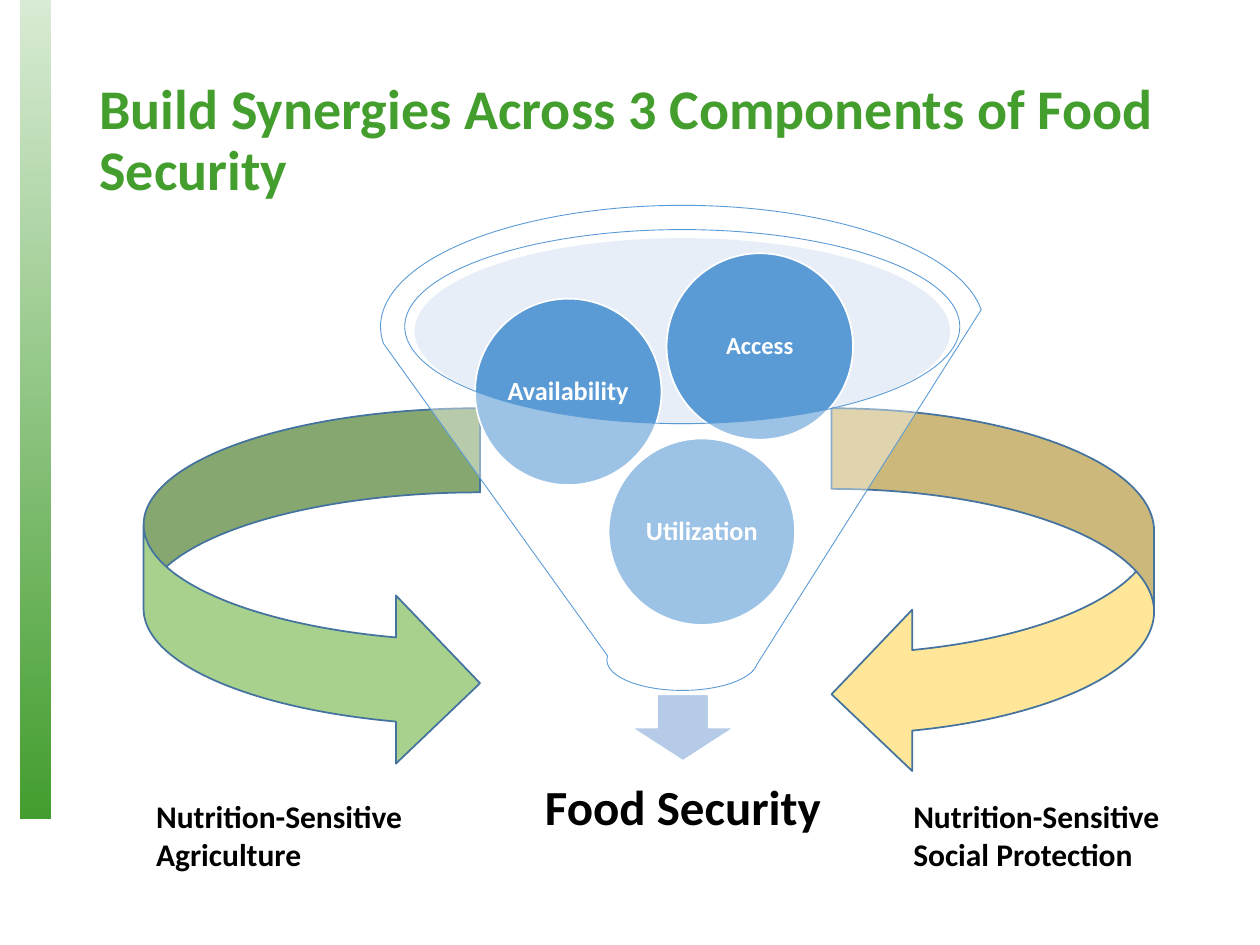
from lxml.etree import SubElement
from pptx import Presentation
from pptx.dml.color import RGBColor
from pptx.enum.shapes import MSO_SHAPE
from pptx.enum.text import MSO_ANCHOR, PP_ALIGN
from pptx.oxml.ns import qn
from pptx.util import Inches, Pt

COLORS = {
    "green": "439E2E", "leaf": "A9D18E", "sand": "FFE699", "edge": "43739E",
    "blue": "5B9BD5", "pale": "C4D5EB", "mist": "B5CBE7",
    "white": "FFFFFF", "black": "000000",
}


class Board:
    font = "Calibri"

    def __init__(self, deck):
        self.slide = deck.slides.add_slide(deck.slide_layouts[5])

    def color(self, name):
        return RGBColor.from_string(COLORS[name])

    def fade(self, fill, percent):
        color = next(fill.iter(qn("a:srgbClr")))
        SubElement(color, qn("a:alpha")).set("val", str(percent * 1000))

    def letter(self, shape, text, size, color, align=PP_ALIGN.LEFT,
               anchor=MSO_ANCHOR.TOP, inset=None, spacing=None):
        frame = shape.text_frame
        frame.text = text
        frame.word_wrap = True
        frame.vertical_anchor = anchor
        if inset is not None:
            frame.margin_left = frame.margin_right = Inches(inset)
            frame.margin_top = frame.margin_bottom = Inches(inset)
        for line in frame.paragraphs:
            line.alignment = align
            line.line_spacing = spacing
            for run in line.runs:
                run.font.name = self.font
                run.font.size = Pt(size)
                run.font.bold = True
                run.font.color.rgb = self.color(color)

    def title(self, text, box):
        shape = self.slide.shapes.title
        shape.left, shape.top, shape.width, shape.height = map(Inches, box)
        self.letter(shape, text, 32, "green", anchor=MSO_ANCHOR.MIDDLE, spacing=0.9)

    def shape(self, kind, box, fill, line=None, weight=1, alpha=None):
        shape = self.slide.shapes.add_shape(kind, *map(Inches, box))
        shape.shadow.inherit = False
        shape.fill.solid()
        shape.fill.fore_color.rgb = self.color(fill)
        if alpha:
            self.fade(shape._element.spPr.find(qn("a:solidFill")), alpha)
        if line:
            shape.line.color.rgb = self.color(line)
            shape.line.width = Pt(weight)
        else:
            shape.line.fill.background()
        return shape

    def stripe(self, box):
        shape = self.shape(MSO_SHAPE.RECTANGLE, box, "green")
        shape.fill.gradient()
        shape.fill.gradient_angle = 270
        for stop in shape.fill.gradient_stops:
            stop.color.rgb = self.color("green")
        self.fade(shape._element.spPr.find(qn("a:gradFill")), 20)

    def ball(self, text, left, top, size):
        shape = self.shape(MSO_SHAPE.OVAL, (left, top, 1.48, 1.48), "blue", "white")
        self.letter(shape, text, size, "white", PP_ALIGN.CENTER,
                    MSO_ANCHOR.MIDDLE, 0.02, 0.9)

    def label(self, text, box, size=18, **style):
        shape = self.slide.shapes.add_textbox(*map(Inches, box))
        self.letter(shape, text, size, "black", **style)


def main():
    deck = Presentation()
    deck.slide_width, deck.slide_height = Inches(10), Inches(7.5)
    board = Board(deck)

    board.stripe((0.16, 0, 0.24, 6.5))
    board.title("Build Synergies Across 3 Components of Food Security",
                (0.69, 0.4, 8.62, 1.45))
    board.shape(MSO_SHAPE.CURVED_LEFT_ARROW, (6.6, 3.24, 2.56, 2.91), "sand", "edge")
    board.shape(MSO_SHAPE.CURVED_RIGHT_ARROW, (1.14, 3.24, 2.67, 2.85), "leaf", "edge")

    board.shape(MSO_SHAPE.OVAL, (3.29, 1.89, 4.25, 1.48), "pale", alpha=40)
    board.shape(MSO_SHAPE.DOWN_ARROW, (5.01, 5.51, 0.82, 0.53), "mist", "white")
    board.label("Food Security", (3.44, 5.93, 3.96, 0.99), 28,
                align=PP_ALIGN.CENTER, anchor=MSO_ANCHOR.MIDDLE,
                inset=0.22, spacing=0.9)
    for ball in (("Utilization", 4.83, 3.48, 15),
                 ("Availability", 3.77, 2.37, 15),
                 ("Access", 5.29, 2.01, 14)):
        board.ball(*ball)
    board.shape(MSO_SHAPE.FUNNEL, (3.02, 1.63, 4.79, 3.85), "white", "blue", 0.5, 40)

    board.label("Nutrition-Sensitive Agriculture", (1.14, 6.28, 2.98, 0.71))
    board.label("Nutrition-Sensitive\nSocial Protection", (7.15, 6.28, 2.8, 0.71))
    deck.save("out.pptx")


if __name__ == "__main__":
    main()
